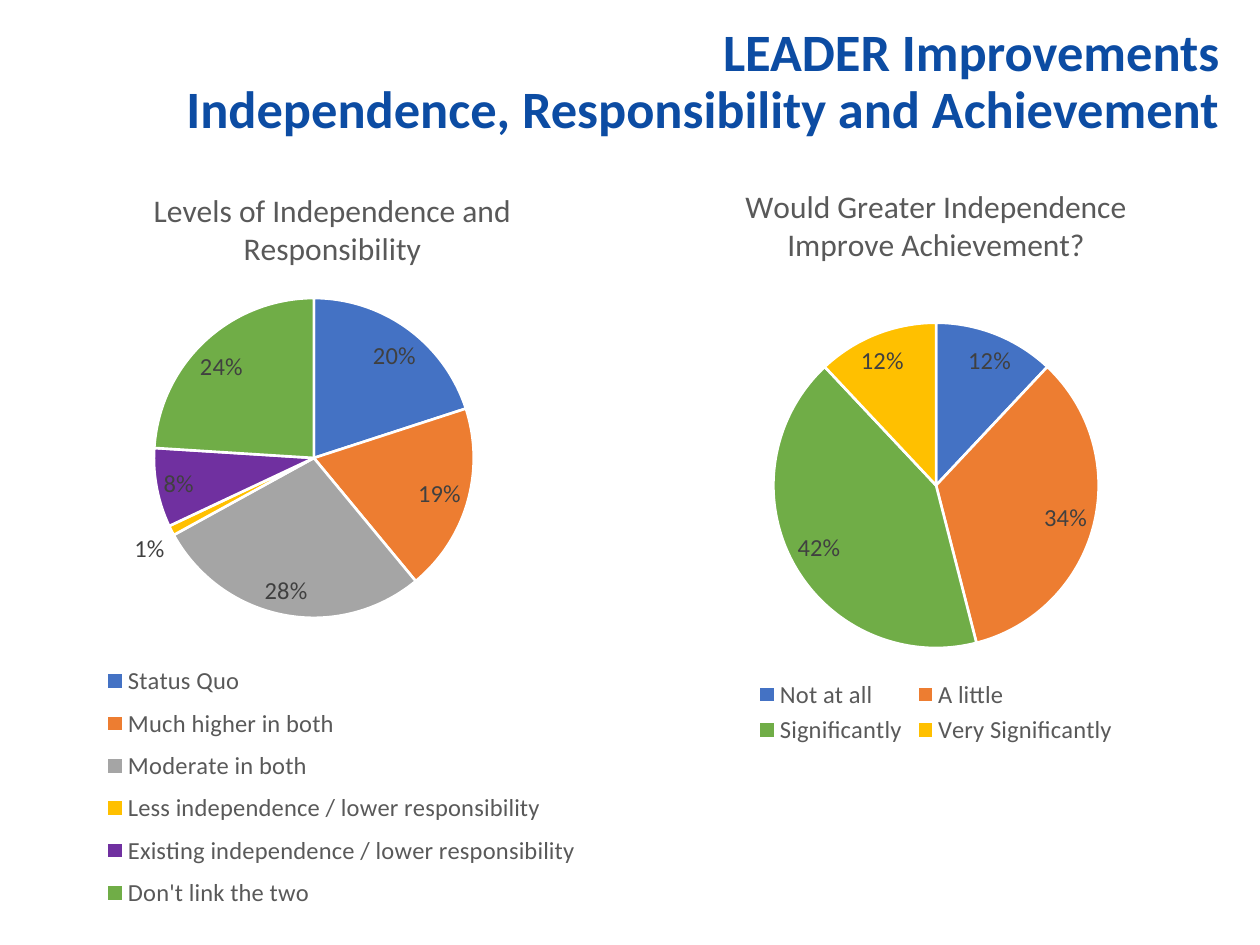
import pptx
import pptx.chart.data
import pptx.dml.color
import pptx.enum.chart
import pptx.enum.text
import pptx.oxml
import pptx.oxml.ns
import pptx.util
from pptx.util import Cm

FONT = "Calibri"
BLUE, ORANGE, GREY = "4472C4", "ED7D31", "A5A5A5"
YELLOW, PURPLE, GREEN = "FFC000", "7030A0", "70AD47"
TITLE_BLUE, TEXT_GREY, LABEL_GREY, WHITE = "0C4CA3", "595959", "404040", "FFFFFF"

INDEPENDENCE_LEVELS = [
    ("Status Quo", 0.20, BLUE),
    ("Much higher in both", 0.19, ORANGE),
    ("Moderate in both", 0.28, GREY),
    ("Less independence / lower responsibility", 0.01, YELLOW),
    ("Existing independence / lower responsibility", 0.08, PURPLE),
    ("Don't link the two", 0.24, GREEN),
]
ACHIEVEMENT_ANSWERS = [
    ("Not at all", 0.12, BLUE),
    ("A little", 0.34, ORANGE),
    ("Significantly", 0.42, GREEN),
    ("Very Significantly", 0.12, YELLOW),
]


def color(hex_string):
    return pptx.dml.color.RGBColor.from_string(hex_string)


def format_font(font, size, hex_string, bold=False):
    font.name = FONT
    font.size = pptx.util.Pt(size)
    font.bold = bold
    font.color.rgb = color(hex_string)


def write_text(text_frame, text, size, hex_string, bold=False, align=None, line_spacing=None):
    """Fill the first paragraph; a vertical tab in the text is a line break."""
    paragraph = text_frame.paragraphs[0]
    paragraph.text = text
    paragraph.alignment = align
    paragraph.line_spacing = line_spacing
    for run in paragraph.runs:
        format_font(run.font, size, hex_string, bold)


def set_layout(element, index, box, inner=False):
    """Place a chart part at box: left, top, width, height as shares of the chart."""
    old_layout = element.find(pptx.oxml.ns.qn("c:layout"))
    if old_layout is not None:
        element.remove(old_layout)
    target = '<c:layoutTarget val="inner"/>' if inner else ""
    modes = '<c:xMode val="edge"/><c:yMode val="edge"/>'
    sizes = "".join(f'<c:{name} val="{value}"/>' for name, value in zip("xywh", box))
    layout = pptx.oxml.parse_xml(
        f'<c:layout {pptx.oxml.ns.nsdecls("c")}>'
        f"<c:manualLayout>{target}{modes}{sizes}</c:manualLayout></c:layout>"
    )
    element.insert(index, layout)


def add_title(slide, left, top, width, height):
    text_frame = slide.shapes.add_textbox(left, top, width, height).text_frame
    text_frame.word_wrap = True
    text_frame.vertical_anchor = pptx.enum.text.MSO_ANCHOR.MIDDLE
    write_text(
        text_frame,
        "LEADER Improvements\vIndependence, Responsibility and Achievement",
        30, TITLE_BLUE, bold=True, align=pptx.enum.text.PP_ALIGN.RIGHT, line_spacing=0.9,
    )


def add_pie(slide, left, top, width, height, title, slices, plot_box=None, legend_box=None):
    names, values, fills = zip(*slices)
    chart_data = pptx.chart.data.CategoryChartData(number_format="0%")
    chart_data.categories = names
    chart_data.add_series("Series 1", values)
    chart = slide.shapes.add_chart(
        pptx.enum.chart.XL_CHART_TYPE.PIE, left, top, width, height, chart_data
    ).chart
    format_font(chart.font, 10, "000000")

    chart.has_title = True
    write_text(chart.chart_title.text_frame, title, 18, TEXT_GREY)
    chart.chart_title.include_in_layout = False

    chart.has_legend = True
    chart.legend.position = pptx.enum.chart.XL_LEGEND_POSITION.BOTTOM
    chart.legend.include_in_layout = False
    format_font(chart.legend.font, 14, TEXT_GREY)

    plot = chart.plots[0]
    plot.vary_by_categories = True
    for index, fill in enumerate(fills):
        point_format = plot.series[0].points[index].format
        point_format.fill.solid()
        point_format.fill.fore_color.rgb = color(fill)
        point_format.line.color.rgb = color(WHITE)
        point_format.line.width = pptx.util.Pt(1.5)

    labels = plot.series[0].data_labels
    labels.show_value = True
    labels.number_format = "0%"
    labels.number_format_is_linked = False
    labels.position = pptx.enum.chart.XL_LABEL_POSITION.BEST_FIT
    format_font(labels.font, 14, LABEL_GREY)

    if plot_box:
        set_layout(chart._chartSpace.chart.plotArea, 0, plot_box, inner=True)
    if legend_box:
        set_layout(chart.legend._element, 1, legend_box)


def main():
    presentation = pptx.Presentation()
    presentation.slide_width = Cm(25.4)
    presentation.slide_height = Cm(19.05)
    slide = presentation.slides.add_slide(presentation.slide_layouts[6])

    chart_top = Cm(3.23)
    add_pie(
        slide, Cm(0.5), chart_top, Cm(12.4), Cm(15.8),
        "Levels of Independence and Responsibility", INDEPENDENCE_LEVELS,
        plot_box=(0.21, 0.13, 0.52, 0.5), legend_box=(0.1, 0.63, 0.83, 0.34),
    )
    add_pie(
        slide, Cm(12.9), chart_top, Cm(11.94), Cm(11.89),
        "Would Greater Independence Improve Achievement?", ACHIEVEMENT_ANSWERS,
    )
    add_title(slide, Cm(3.1), Cm(0.33), Cm(21.74), Cm(2.69))
    presentation.save("out.pptx")


if __name__ == "__main__":
    main()
